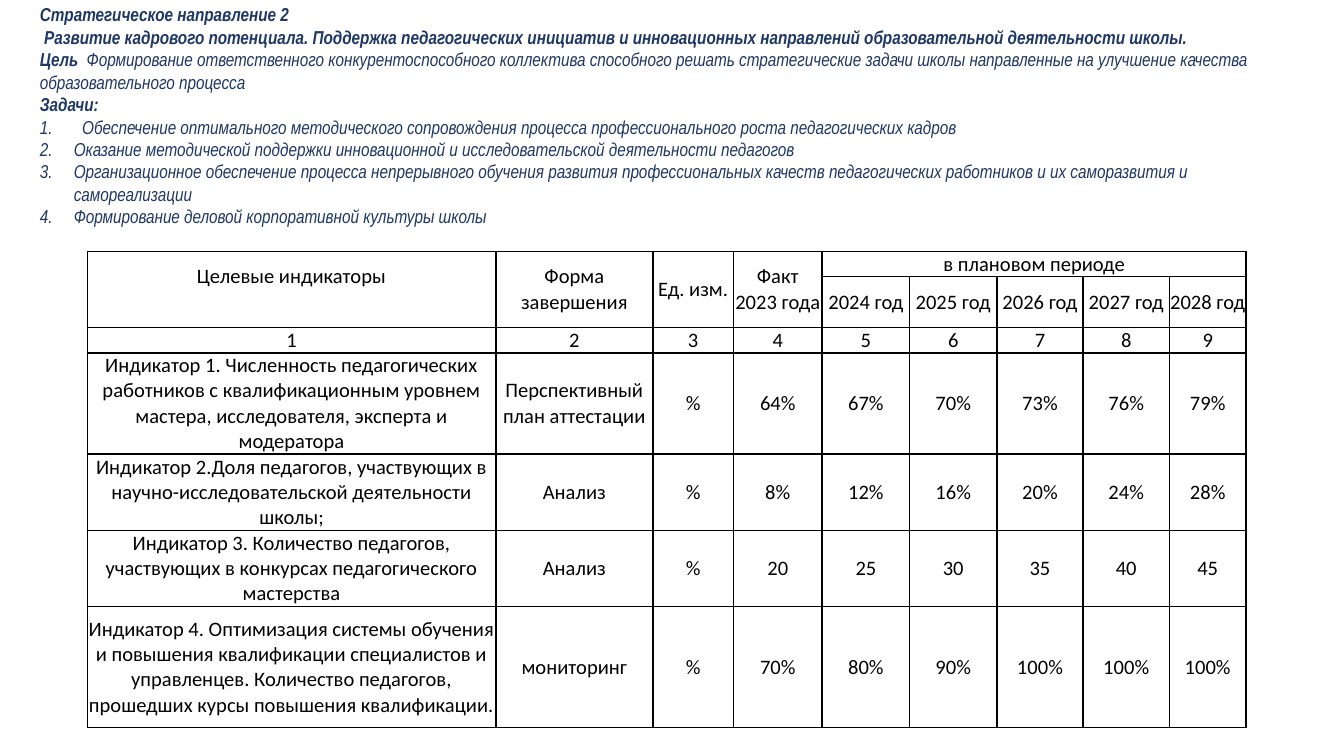
from lxml.etree import SubElement
from pptx import Presentation
from pptx.dml.color import RGBColor
from pptx.enum.text import MSO_ANCHOR as Anchor, MSO_AUTO_SIZE as AutoSize, PP_ALIGN as Align
from pptx.oxml.ns import qn
from pptx.util import Cm, Pt

NAVY = RGBColor(0x20, 0x38, 0x64)
BLACK = RGBColor(0, 0, 0)

DIRECTION = [
    "Стратегическое направление 2",
    "Развитие кадрового потенциала. Поддержка педагогических инициатив и "
    "инновационных направлений образовательной деятельности школы.",
]
GOAL = ("Формирование ответственного конкурентоспособного коллектива способного решать "
        "стратегические задачи школы направленные на улучшение качества образовательного процесса")
TASKS = [
    "Обеспечение оптимального методического сопровождения процесса профессионального "
    "роста педагогических кадров",
    "Оказание методической поддержки инновационной и исследовательской деятельности педагогов",
    "Организационное обеспечение процесса непрерывного обучения развития профессиональных "
    "качеств педагогических работников и их саморазвития и самореализации",
    "Формирование деловой корпоративной культуры школы",
]
HEADINGS = ["Целевые индикаторы", "Форма завершения", "Ед. изм.", "Факт\n2023 года",
            "в плановом периоде"]
YEARS = [f"{year} год" for year in range(2024, 2029)]
INDICATORS = [
    ["Индикатор 1. Численность педагогических работников с квалификационным уровнем "
     "мастера, исследователя, эксперта и модератора",
     "Перспективный план аттестации", "%", "64%", "67%", "70%", "73%", "76%", "79%"],
    ["Индикатор 2.Доля педагогов, участвующих в научно-исследовательской деятельности школы;",
     "Анализ", "%", "8%", "12%", "16%", "20%", "24%", "28%"],
    ["Индикатор 3. Количество педагогов, участвующих в конкурсах педагогического мастерства",
     "Анализ", "%", "20", "25", "30", "35", "40", "45"],
    ["Индикатор 4. Оптимизация системы обучения и повышения квалификации специалистов и "
     "управленцев. Количество педагогов, прошедших курсы повышения квалификации.",
     "мониторинг", "%", "70%", "80%", "90%", "100%", "100%", "100%"],
]
COLUMN_WIDTHS = [7.72, 2.97, 1.52, 1.68, 1.65, 1.65, 1.63, 1.63, 1.45]
ROW_HEIGHTS = [0.46, 0.91, 0.46, 1.83, 1.37, 1.37, 2.29]


def add_run(paragraph, text, font_name, size, color, bold=False, italic=False):
    run = paragraph.add_run()
    run.text = text
    font = run.font
    font.name, font.size, font.bold, font.italic = font_name, Pt(size), bold, italic
    font.color.rgb = color


def add_statement(paragraph, text, bold=False):
    add_run(paragraph, text, "Arial Narrow", 10, NAVY, bold, italic=True)


def next_paragraph(frame, indent=0, number=None):
    first = frame.paragraphs[0]
    paragraph = frame.add_paragraph() if first.runs else first
    properties = paragraph._p.get_or_add_pPr()
    properties.set("marL", str(Cm(indent)))
    properties.set("indent", str(-Cm(indent) if number else 0))
    paragraph.alignment = Align.LEFT
    paragraph.space_before = Pt(0)
    if number:
        SubElement(properties, qn("a:buFont"), typeface="+mj-lt")
        SubElement(properties, qn("a:buAutoNum"), type="arabicPeriod", startAt=str(number))
    else:
        SubElement(properties, qn("a:buNone"))
    return paragraph


def place_text(placeholder, box):
    placeholder.left, placeholder.top, placeholder.width, placeholder.height = map(Cm, box)
    frame = placeholder.text_frame
    frame.word_wrap = True
    frame.auto_size = AutoSize.NONE
    frame.vertical_anchor = Anchor.TOP
    frame.margin_top = frame.margin_bottom = 0
    return frame


def fill_direction(title, box):
    frame = place_text(title, box)
    for text, indent in zip(DIRECTION, (0, 0.08)):
        add_statement(next_paragraph(frame, indent), text, bold=True)


def fill_goal_and_tasks(body, box):
    frame = place_text(body, box)
    goal = next_paragraph(frame)
    add_statement(goal, "Цель ", bold=True)
    add_statement(goal, " " + GOAL)
    add_statement(next_paragraph(frame), "Задачи:", bold=True)
    for position, task in enumerate(TASKS):
        indent = 0.64 if position else 0.8
        add_statement(next_paragraph(frame, indent, 2 if position else 1), task)


def style_cell(cell):
    cell.margin_left = cell.margin_right = cell.margin_top = cell.margin_bottom = 0
    cell.vertical_anchor = Anchor.MIDDLE
    properties = cell._tc.get_or_add_tcPr()
    for side in ("lnL", "lnR", "lnT", "lnB"):
        line = SubElement(properties, qn(f"a:{side}"), w=str(Pt(1)))
        paint = SubElement(line, qn("a:solidFill"))
        SubElement(paint, qn("a:srgbClr"), val=str(BLACK))
    cell.fill.background()


def write_cell(cell, text):
    frame = cell.text_frame
    for position, line in enumerate(text.split("\n")):
        paragraph = frame.add_paragraph() if position else frame.paragraphs[0]
        paragraph.alignment = Align.CENTER
        add_run(paragraph, line, "Calibri", 11, BLACK)


def add_indicator_table(slide, box):
    rows = [HEADINGS, [None] * 4 + YEARS, [str(n) for n in range(1, 10)], *INDICATORS]
    left, top, width, height = map(Cm, box)
    table_frame = slide.shapes.add_table(
        len(rows), len(COLUMN_WIDTHS), left, top, width, height)
    table = table_frame.table
    table.first_row = table.horz_banding = False
    for column, column_width in zip(table.columns, COLUMN_WIDTHS):
        column.width = Cm(column_width)
    for row, row_height in zip(table.rows, ROW_HEIGHTS):
        row.height = Cm(row_height)
    table_frame.height = height
    for cell in table.iter_cells():
        style_cell(cell)
    for column in range(4):
        table.cell(0, column).merge(table.cell(1, column))
    table.cell(0, 4).merge(table.cell(0, 8))
    for row, texts in enumerate(rows):
        for column, text in enumerate(texts):
            if text:
                write_cell(table.cell(row, column), text)
    table.cell(0, 0).margin_bottom = Cm(0.47)


def main():
    presentation = Presentation()
    presentation.slide_width, presentation.slide_height = Cm(25.4), Cm(14.29)
    slide = presentation.slides.add_slide(presentation.slide_layouts[1])
    title, body = slide.placeholders
    fill_direction(title, (0.5, 0.06, 24.2, 0.85))
    fill_goal_and_tasks(body, (0.5, 0.91, 24.2, 3.42))
    add_indicator_table(slide, (1.65, 4.75, sum(COLUMN_WIDTHS), 8.79))
    presentation.save("out.pptx")


if __name__ == "__main__":
    main()
